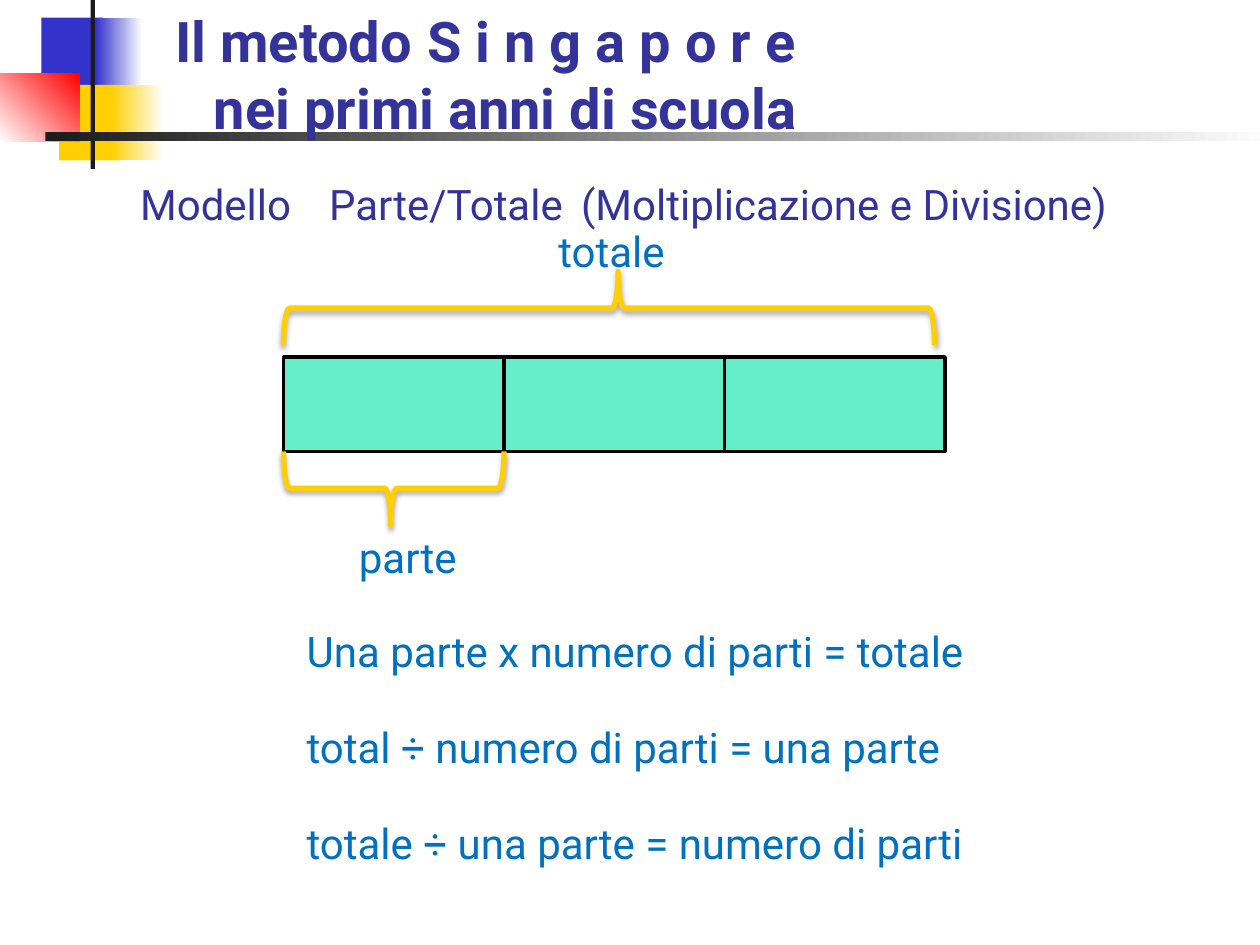
from lxml import etree
from pptx import Presentation
from pptx.dml import color
from pptx.enum import shapes, text
from pptx.oxml import ns
from pptx.util import Pt

COLORS = {
    "ink": "333399", "label": "0070C0", "part": "00E4A8", "brace": "FFCF01",
    "blue": "3333CC", "yellow": "FFCF01", "red": "FF0000",
    "dark": "1C1C1C", "black": "000000", "white": "FFFFFF",
}
LABEL = {"name": "Roboto", "size": Pt(24), "bold": False}
TITLE = {"name": "Roboto", "size": Pt(32), "bold": True}
FRAME = {
    "word_wrap": True, "auto_size": text.MSO_AUTO_SIZE.NONE,
    "vertical_anchor": text.MSO_ANCHOR.TOP,
    "margin_left": Pt(7.2), "margin_right": Pt(7.2),
    "margin_top": Pt(3.6), "margin_bottom": Pt(3.6),
}
PART_LEFT, PART_TOP, PART_WIDTH, PART_HEIGHT, PART_COUNT = 162, 204, 126, 54, 3
FORMULAS = [
    "Una parte x numero di parti = totale",
    "total ÷ numero di parti = una parte",
    "totale ÷ una parte = numero di parti",
]


def rgb(name):
    return color.RGBColor.from_string(COLORS[name])


def apply(target, values):
    for name, value in values.items():
        setattr(target, name, value)


def add_child(parent, tag, **attributes):
    return etree.SubElement(parent, ns.qn(tag), attributes)


def place(box, left, top, width, height):
    apply(box, {"left": Pt(left), "top": Pt(top),
                "width": Pt(width), "height": Pt(height)})


def write(box, lines, font, ink, gap=0, tabs=(), indents=()):
    frame = box.text_frame
    apply(frame, FRAME)
    for index, line in enumerate(lines):
        para = frame.paragraphs[0] if index == 0 else frame.add_paragraph()
        apply(para, {"alignment": text.PP_ALIGN.LEFT, "line_spacing": 1.0,
                     "space_before": Pt(0), "space_after": Pt(gap)})
        span = para.add_run()
        span.text = line
        apply(span.font, font)
        span.font.color.rgb = rgb(ink)
        settings = para._p.get_or_add_pPr()
        settings.set("marL", str(Pt(indents[index] if indents else 0)))
        settings.set("indent", "0")
        add_child(settings, "a:buNone")
        if tabs:
            stops = add_child(settings, "a:tabLst")
            for stop in tabs:
                add_child(stops, "a:tab", pos=str(Pt(stop)), algn="l")


def add_label(page, line, left, top, width, ink="label", tabs=()):
    box = page.shapes.add_textbox(Pt(left), Pt(top), Pt(width), Pt(36.5))
    write(box, [line], LABEL, ink, tabs=tabs)


def add_part(page, left):
    part = page.shapes.add_shape(shapes.MSO_SHAPE.RECTANGLE, Pt(left), Pt(PART_TOP),
                                 Pt(PART_WIDTH), Pt(PART_HEIGHT))
    part.shadow.inherit = False
    part.fill.solid()
    part.fill.fore_color.rgb = rgb("part")
    tint = part.element.spPr.find(ns.qn("a:solidFill"))[0]
    add_child(tint, "a:alpha", val="60000")
    part.line.color.rgb = rgb("black")
    part.line.width = Pt(2)


def add_brace(page, left, top, span, rotation):
    depth = 42
    brace = page.shapes.add_shape(
        shapes.MSO_SHAPE.RIGHT_BRACE, Pt(left + (span - depth) / 2),
        Pt(top + (depth - span) / 2), Pt(depth), Pt(span))
    brace.rotation = rotation
    brace.adjustments[0] = 0.083
    brace.adjustments[1] = 0.514
    brace.fill.background()
    brace.line.color.rgb = rgb("brace")
    brace.line.width = Pt(3)
    brace.shadow.inherit = False
    effects = brace.element.spPr.find(ns.qn("a:effectLst"))
    shadow = add_child(effects, "a:outerShdw", blurRad=str(Pt(3.1)), dist=str(Pt(1.8)),
                       dir="5400000", rotWithShape="0")
    shade = add_child(shadow, "a:srgbClr", val=COLORS["black"])
    add_child(shade, "a:alpha", val="35000")


def add_block(group, left, top, width, height, start, end=None, angle=0):
    block = group.shapes.add_shape(shapes.MSO_SHAPE.RECTANGLE, Pt(left), Pt(top),
                                   Pt(width), Pt(height))
    block.shadow.inherit = False
    block.line.fill.background()
    if end is None:
        block.fill.solid()
        block.fill.fore_color.rgb = rgb(start)
        return
    block.fill.gradient()
    block.fill.gradient_angle = angle
    for stop, name in zip(block.fill.gradient_stops, (start, end)):
        stop.color.rgb = rgb(name)


def add_decoration(page):
    group = page.shapes.add_group_shape()
    add_block(group, 23.6, 10, 35.2, 43, "blue")
    add_block(group, 54.8, 10, 26.6, 43, "blue", "white")
    add_block(group, 33.8, 48.5, 34.6, 43.2, "yellow")
    add_block(group, 63.4, 48.5, 30, 43.2, "yellow", "white")
    add_block(group, 0, 41.8, 45.4, 38.9, "white", "red", 45)
    add_block(group, 51.8, 0, 2.5, 96.5, "dark")
    add_block(group, 25.9, 75.6, 706.3, 5, "dark", "white")
    return group


def main():
    deck = Presentation()
    apply(deck, {"slide_width": Pt(720), "slide_height": Pt(540)})
    page = deck.slides.add_slide(deck.slide_layouts[1])
    title, body = page.placeholders

    for index in range(PART_COUNT):
        add_part(page, PART_LEFT + index * PART_WIDTH)
    add_brace(page, PART_LEFT, 258, PART_WIDTH, 90)
    add_brace(page, PART_LEFT, 155, 372, 270)
    add_label(page, "parte", 198, 300, 81.5)
    add_label(page, "totale", 312, 125.5, 96)
    add_label(page, "Modello\tParte/Totale\t(Moltiplicazione e Divisione)",
              73, 98.5, 600, "ink", (109.5, 267.5))

    place(body, 168, 354, 468, 145)
    write(body, FORMULAS, LABEL, "label", gap=25.9)

    decoration = add_decoration(page)
    place(title, 93, 0, 458.5, 106.5)
    write(title, ["Il metodo\tS i n g a p o r e", "nei primi anni di scuola"],
          TITLE, "ink", tabs=(158.5,), indents=(0, 22))
    decoration.element.addnext(title.element)
    deck.save("out.pptx")


if __name__ == "__main__":
    main()
